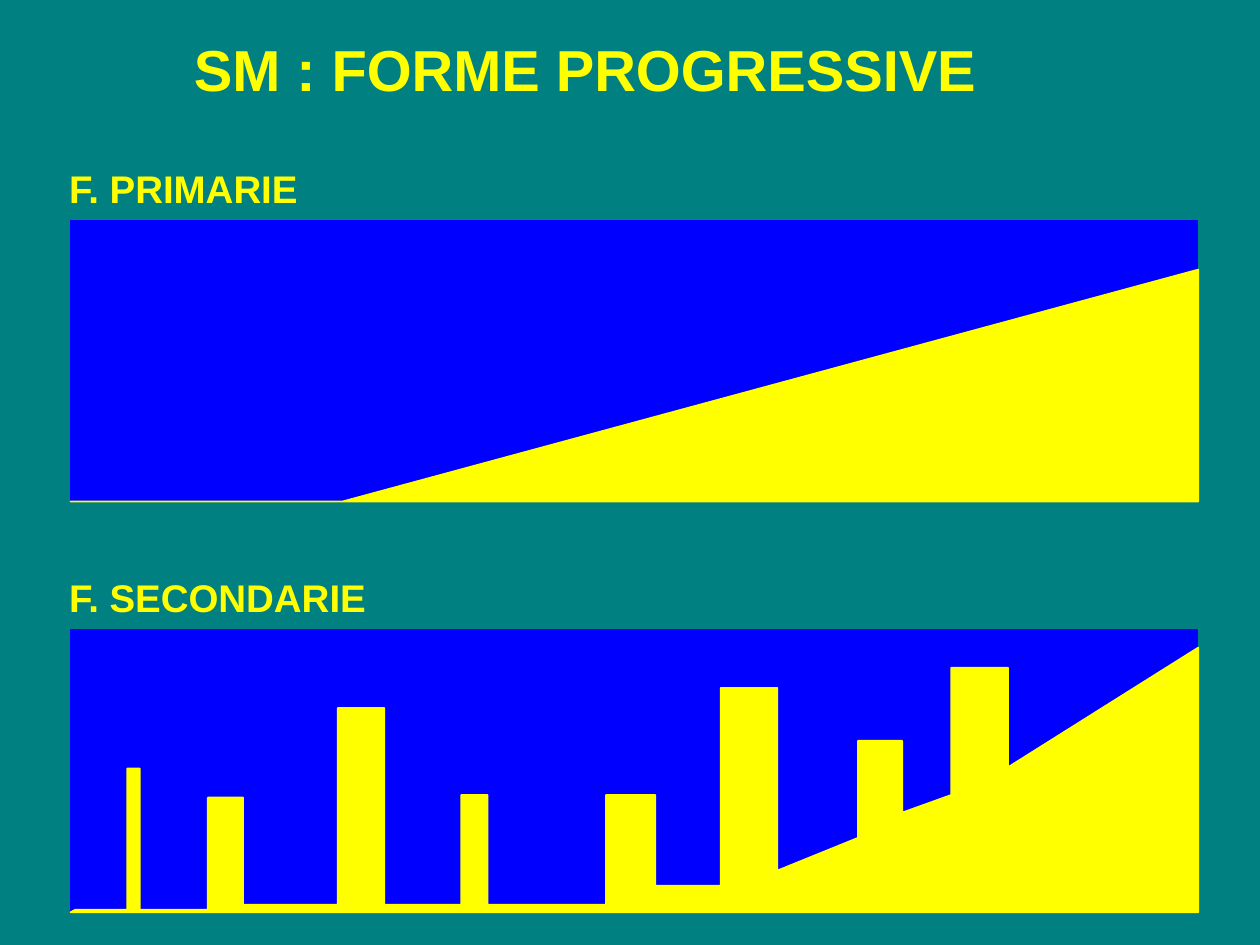
from lxml.etree import SubElement
from pptx import Presentation
from pptx.dml.color import RGBColor
from pptx.enum.shapes import MSO_SHAPE
from pptx.enum.text import MSO_AUTO_SIZE
from pptx.oxml.ns import qn
from pptx.util import Inches, Pt

TEAL, BLUE, YELLOW, BLACK = "008080", "0000FF", "FFFF00", "000000"
LEFT, RIGHT = 0.56, 9.51
PANEL_WIDTH, PANEL_HEIGHT = 8.94, 2.23
PRIMARY_TOP, SECONDARY_TOP = 1.75, 5

# Relapses: left, right, top, foot on the left, foot on the right
RELAPSES = [
    (1.01, 1.11, 6.1, 7.22, 7.22),
    (1.65, 1.93, 6.33, 7.22, 7.18),
    (2.68, 3.05, 5.62, 7.18, 7.18),
    (3.66, 3.87, 6.31, 7.18, 7.18),
    (4.81, 5.2, 6.31, 7.18, 7.03),
    (5.72, 6.17, 5.46, 7.03, 6.91),
    (6.81, 7.16, 5.88, 6.65, 6.45),
    (7.55, 8, 5.3, 6.31, 6.09),
]


def rgb(color):
    return RGBColor.from_string(color)


def paint(shape, color):
    shape.shadow.inherit = False
    shape.fill.solid()
    shape.fill.fore_color.rgb = rgb(color)
    shape.line.color.rgb = rgb(color)
    shape.line.width = Pt(1)


def add_text_shadow(run):
    effects = run._r.get_or_add_rPr().makeelement(qn("a:effectLst"))
    shadow = SubElement(effects, qn("a:outerShdw"),
                        dist="35921", dir="2700000", algn="ctr")
    SubElement(shadow, qn("a:srgbClr"), val=BLACK)
    run._r.rPr.find(qn("a:solidFill")).addnext(effects)


def add_text(s, text, left, top, width, height, size, wrap=False):
    tf = s.shapes.add_textbox(*map(Inches, (left, top, width, height))).text_frame
    tf.word_wrap = wrap
    tf.auto_size = MSO_AUTO_SIZE.SHAPE_TO_FIT_TEXT
    r = tf.paragraphs[0].add_run()
    r.text = text
    for name, value in {"name": "Arial", "size": Pt(size), "bold": True}.items():
        setattr(r.font, name, value)
    r.font.color.rgb = rgb(YELLOW)
    add_text_shadow(r)


def add_panel(s, top):
    box = map(Inches, (LEFT, top, PANEL_WIDTH, PANEL_HEIGHT))
    paint(s.shapes.add_shape(MSO_SHAPE.RECTANGLE, *box), BLUE)


def add_area(s, points):
    start, *rest = [(Inches(x), Inches(y)) for x, y in points]
    builder = s.shapes.build_freeform(*start)
    builder.add_line_segments(rest)
    paint(builder.convert_to_shape(), YELLOW)


def relapse_outline():
    points = [(0.6, 7.22)]
    for left, right, top, foot_left, foot_right in RELAPSES:
        points += [(left, foot_left), (left, top), (right, top), (right, foot_right)]
    return points + [(RIGHT, 5.14), (RIGHT, 7.24), (LEFT, 7.24)]


def main():
    prs = Presentation()
    prs.slide_width, prs.slide_height = Inches(10), Inches(7.5)
    s = prs.slides.add_slide(prs.slide_layouts[6])
    s.background.fill.solid()
    s.background.fill.fore_color.rgb = rgb(TEAL)

    add_text(s, "SM : FORME PROGRESSIVE", 1.44, 0.22, 7.23, 0.65, 33, wrap=True)
    add_panel(s, PRIMARY_TOP)
    add_panel(s, SECONDARY_TOP)
    add_area(s, [(LEFT, 3.98), (2.72, 3.98), (RIGHT, 2.14), (RIGHT, 3.98)])
    add_area(s, relapse_outline())
    add_text(s, "F. PRIMARIE", 0.45, 1.26, 2.05, 0.47, 22)
    add_text(s, "F. SECONDARIE", 0.45, 4.51, 2.6, 0.47, 22)
    prs.save("out.pptx")


if __name__ == "__main__":
    main()
